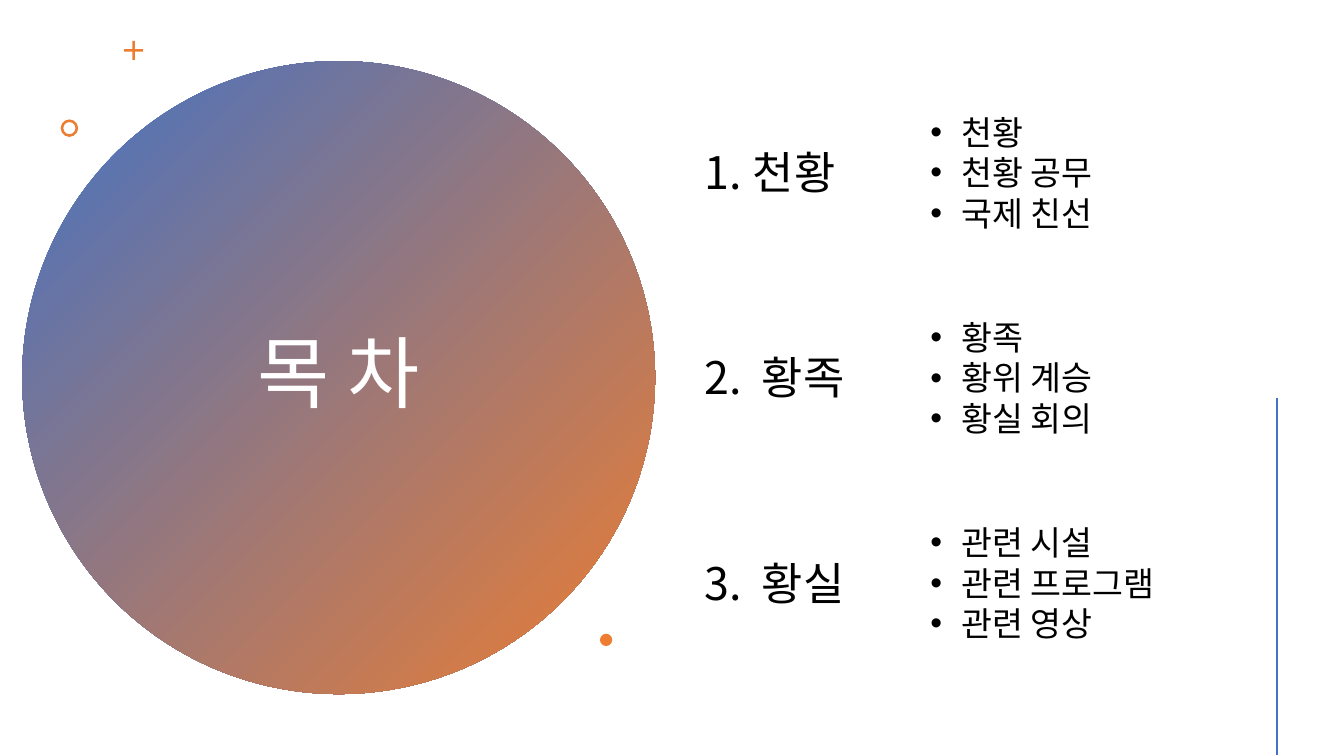
from lxml.etree import SubElement
from pptx import Presentation
from pptx.dml.color import RGBColor
from pptx.enum.shapes import MSO_CONNECTOR, MSO_SHAPE
from pptx.enum.text import MSO_ANCHOR, MSO_AUTO_SIZE, PP_ALIGN
from pptx.oxml.ns import qn
from pptx.util import Cm, Pt

FONT = "Noto Sans CJK KR"
BLUE, ORANGE, WHITE, BLACK = "4472C4", "ED7D31", "FFFFFF", "000000"
CHAPTERS = [
    ("천황", ["천황", "천황 공무", "국제 친선"]),
    ("황족", ["황족", "황위 계승", "황실 회의"]),
    ("황실", ["관련 시설", "관련 프로그램", "관련 영상"]),
]


def color(hex_string):
    return RGBColor.from_string(hex_string)


def place(shape, left, top, width, height):
    shape.left, shape.top = Cm(left), Cm(top)
    shape.width, shape.height = Cm(width), Cm(height)


def set_indent(paragraph, hanging, bullet=None, number=None):
    """Hang the first line, with a bullet character or an automatic number."""
    properties = paragraph._p.get_or_add_pPr()
    properties.set("marL", str(Cm(hanging)))
    properties.set("indent", str(-Cm(hanging)))
    if bullet:
        SubElement(properties, qn("a:buFont"), typeface="Arial")
        SubElement(properties, qn("a:buChar"), char=bullet)
    elif number:
        SubElement(properties, qn("a:buFont"), typeface="+mj-lt")
        SubElement(properties, qn("a:buAutoNum"), type=number)


def write_text(shape, lines, size, fill=BLACK, align=PP_ALIGN.LEFT,
               anchor=MSO_ANCHOR.TOP, spacing=1.0, **indent):
    frame = shape.text_frame
    frame.word_wrap = True
    frame.auto_size = MSO_AUTO_SIZE.NONE
    frame.vertical_anchor = anchor
    for index, line in enumerate(lines):
        paragraph = frame.add_paragraph() if index else frame.paragraphs[0]
        paragraph.alignment = align
        paragraph.line_spacing = spacing
        paragraph.space_before = paragraph.space_after = Pt(0)
        if indent:
            set_indent(paragraph, **indent)
        run = paragraph.add_run()
        run.text = line
        run.font.name, run.font.size, run.font.bold = FONT, Pt(size), False
        run.font.color.rgb = color(fill)
        SubElement(run._r.get_or_add_rPr(), qn("a:ea"), typeface=FONT)


def add_plain_shape(slide, kind, left, top, size, fill=ORANGE, adjustment=None):
    shape = slide.shapes.add_shape(kind, Cm(left), Cm(top), Cm(size), Cm(size))
    shape.shadow.inherit = False
    shape.line.fill.background()
    shape.fill.solid()
    shape.fill.fore_color.rgb = color(fill)
    if adjustment is not None:
        shape.adjustments[0] = adjustment
    return shape


def add_title_circle(slide, left, top, size):
    # Gradient disc, placed behind the title
    disc = add_plain_shape(slide, MSO_SHAPE.OVAL, left, top, size)
    disc.fill.gradient()
    disc.fill.gradient_angle = 315
    for stop, position, hex_string in zip(disc.fill.gradient_stops, (0, 1), (BLUE, ORANGE)):
        stop.position = position
        stop.color.rgb = color(hex_string)
    title = slide.shapes.title
    title._element.addprevious(disc._element)
    place(title, left + 2.9, top + 2.03, 10.14, 11.86)
    write_text(title, ["목 차"], 56, fill=WHITE, align=PP_ALIGN.CENTER,
               anchor=MSO_ANCHOR.MIDDLE, spacing=0.9)

    # Small ornaments around the disc
    add_plain_shape(slide, MSO_SHAPE.CROSS, left + 2.57, top - 0.51, 0.48, adjustment=0.43)
    add_plain_shape(slide, MSO_SHAPE.DONUT, left + 0.97, top + 1.47, 0.44, adjustment=0.15)
    add_plain_shape(slide, MSO_SHAPE.OVAL, left + 14.56, top + 14.43, 0.31)


def add_chapter(slide, body, number, name, topics, left, top):
    # Numbered heading
    heading = slide.shapes.add_textbox(Cm(left), Cm(top + 0.84), Cm(4.75), Cm(1.62))
    if number == 1:
        write_text(heading, [f" {name}"], 32, hanging=0.97, number="arabicPeriod")
    else:
        write_text(heading, [f"{number}.\t{name}"], 32, hanging=1.45)
    # Topic list
    place(body, left + 5.69, top, 7, 3.33)
    write_text(body, topics, 24, hanging=0.79, bullet="•")


def add_side_line(slide, left, top, bottom):
    line = slide.shapes.add_connector(
        MSO_CONNECTOR.STRAIGHT, Cm(left), Cm(top), Cm(left), Cm(bottom))
    line.line.color.rgb = color(BLUE)
    line.line.width = Pt(2)
    SubElement(line._element.spPr, qn("a:effectLst"))


def build_contents(presentation):
    slide = presentation.slides.add_slide(presentation.slide_layouts.get_by_name("Comparison"))
    bodies = [shape for shape in slide.placeholders if shape.placeholder_format.idx in (1, 2, 3, 4)]
    spare = bodies.pop()
    spare._element.getparent().remove(spare._element)

    add_title_circle(slide, 0.56, 1.54, 15.95)
    add_side_line(slide, 32.18, 10.03, 19.03)
    for index, (body, (name, topics)) in enumerate(zip(bodies, CHAPTERS)):
        add_chapter(slide, body, index + 1, name, topics, 17.5, 2.69 + 5.17 * index)


def main():
    presentation = Presentation()
    presentation.slide_width, presentation.slide_height = Cm(33.87), Cm(19.05)
    build_contents(presentation)
    presentation.save("out.pptx")


if __name__ == "__main__":
    main()
